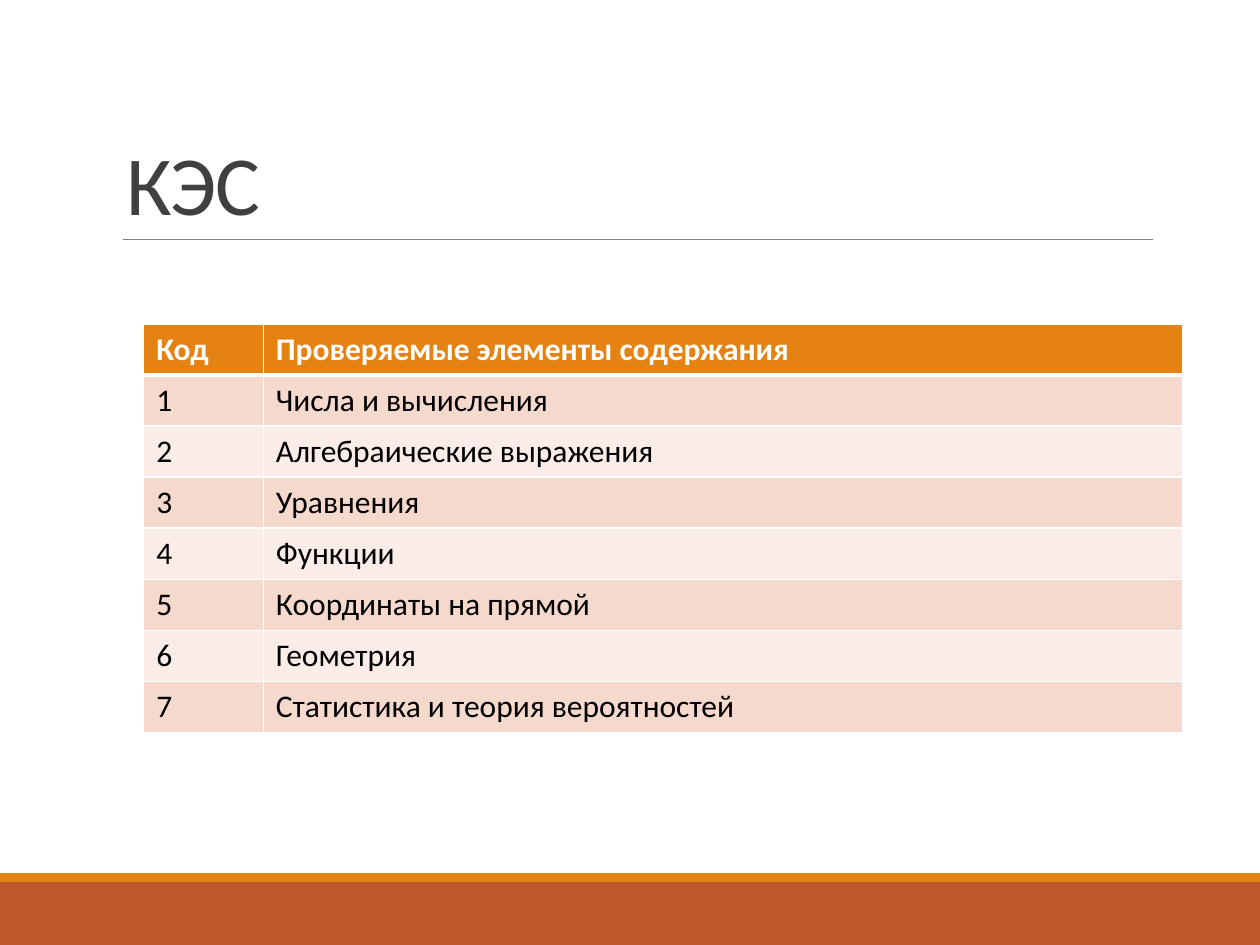
from pptx import Presentation
from pptx.dml.color import RGBColor as Color
from pptx.enum.shapes import MSO_CONNECTOR as Connector, MSO_SHAPE as Shape
from pptx.enum.text import MSO_ANCHOR as Anchor
from pptx.oxml.ns import qn
from pptx.util import Inches, Pt
from lxml.etree import SubElement

COLORS = {
    "orange": "E48312", "rust": "BD582C", "rule": "808080",
    "title": "404040", "white": "FFFFFF", "black": "000000",
    "odd": "F5D9CC", "even": "FAEDE7",
}
HEADER = ("Код", "Проверяемые элементы содержания")
TOPICS = (
    "Числа и вычисления", "Алгебраические выражения", "Уравнения", "Функции",
    "Координаты на прямой", "Геометрия", "Статистика и теория вероятностей",
)
TITLE_FORMAT = {"size": Pt(48), "name": "Calibri", "bold": False}
HEADER_FORMAT = {"size": Pt(18), "name": "Calibri", "bold": True}
BODY_FORMAT = {**HEADER_FORMAT, "bold": False}


def color(name):
    return Color.from_string(COLORS[name])


def inches(*lengths):
    return [Inches(length) for length in lengths]


def paint(fill, name):
    fill.solid()
    fill.fore_color.rgb = color(name)


def format_font(font, values, color_name):
    for attribute, value in values.items():
        setattr(font, attribute, value)
    font.color.rgb = color(color_name)


def add_footer(slide, left, top, width, height):
    """Thin orange strip above a rust band."""
    strip = 0.07
    bands = (("rust", top + strip, height - strip), ("orange", top, strip))
    for name, band_top, band_height in bands:
        band = slide.shapes.add_shape(
            Shape.RECTANGLE, *inches(left, band_top, width, band_height))
        band.shadow.inherit = False
        paint(band.fill, name)
        band.line.fill.background()


def add_title(slide, text, left, top, width, height):
    """Title resting on a thin rule."""
    title = slide.shapes.title
    title.left, title.top, title.width, title.height = inches(left, top, width, height)
    frame = title.text_frame
    frame.word_wrap = True
    frame.vertical_anchor = Anchor.BOTTOM
    paragraph = frame.paragraphs[0]
    paragraph.line_spacing = 0.85
    paragraph._p.get_or_add_pPr().set("algn", "l")
    run = paragraph.add_run()
    run.text = text
    format_font(run.font, TITLE_FORMAT, "title")
    run._r.get_or_add_rPr().set("spc", "-50")

    bottom = top + height
    rule = slide.shapes.add_connector(
        Connector.STRAIGHT, *inches(left + 0.08, bottom, left + width, bottom))
    rule.line.color.rgb = color("rule")
    rule.line.width = Pt(0.5)
    SubElement(rule._element.spPr, qn("a:effectLst"))


def add_borders(cell, widths):
    """White cell borders; widths maps each side to points."""
    properties = cell._tc.get_or_add_tcPr()
    for index, (side, width) in enumerate(widths.items()):
        line = SubElement(properties, qn(f"a:ln{side}"), w=str(Pt(width)))
        fill = SubElement(line, qn("a:solidFill"))
        SubElement(fill, qn("a:srgbClr"), val=COLORS["white"])
        properties.insert(index, line)  # borders come before the fill


def add_topics(slide, left, top, width, height):
    """Table of numbered topics with banded rows."""
    rows = [HEADER] + [(str(code), topic) for code, topic in enumerate(TOPICS, 1)]
    table = slide.shapes.add_table(
        len(rows), len(HEADER), *inches(left, top, width, height)).table
    code_width = 0.95
    for column, column_width in zip(table.columns, (code_width, width - code_width)):
        column.width = Inches(column_width)
    for row_index, row in enumerate(rows):
        is_header = row_index == 0
        band = "orange" if is_header else ("even", "odd")[row_index % 2]
        widths = {"L": 1, "R": 1, "T": 3 if row_index == 1 else 1,
                  "B": 3 if is_header else 1}
        for column_index, text in enumerate(row):
            cell = table.cell(row_index, column_index)
            paint(cell.fill, band)
            add_borders(cell, widths)
            run = cell.text_frame.paragraphs[0].add_run()
            run.text = text
            format_font(run.font, HEADER_FORMAT if is_header else BODY_FORMAT,
                        "white" if is_header else "black")


def main():
    presentation = Presentation()
    presentation.slide_width, presentation.slide_height = inches(10, 7.5)
    slide = presentation.slides.add_slide(presentation.slide_layouts.get_by_name("Title Only"))
    add_footer(slide, 0, 6.93, 10, 0.57)
    add_title(slide, "КЭС", 0.9, 0.31, 8.25, 1.59)
    add_topics(slide, 1.14, 2.57, 8.25, 3.24)
    presentation.save("out.pptx")


if __name__ == "__main__":
    main()
